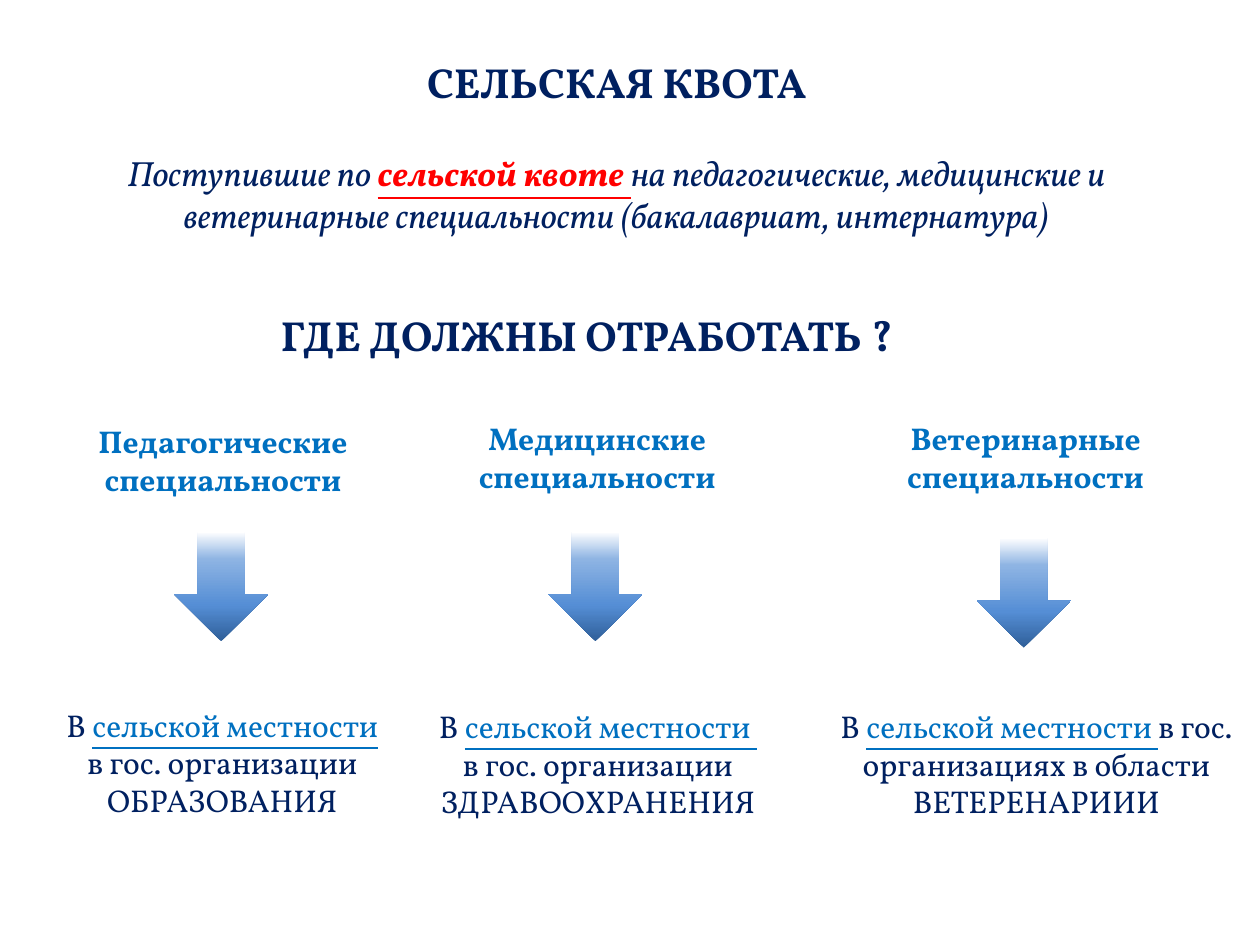
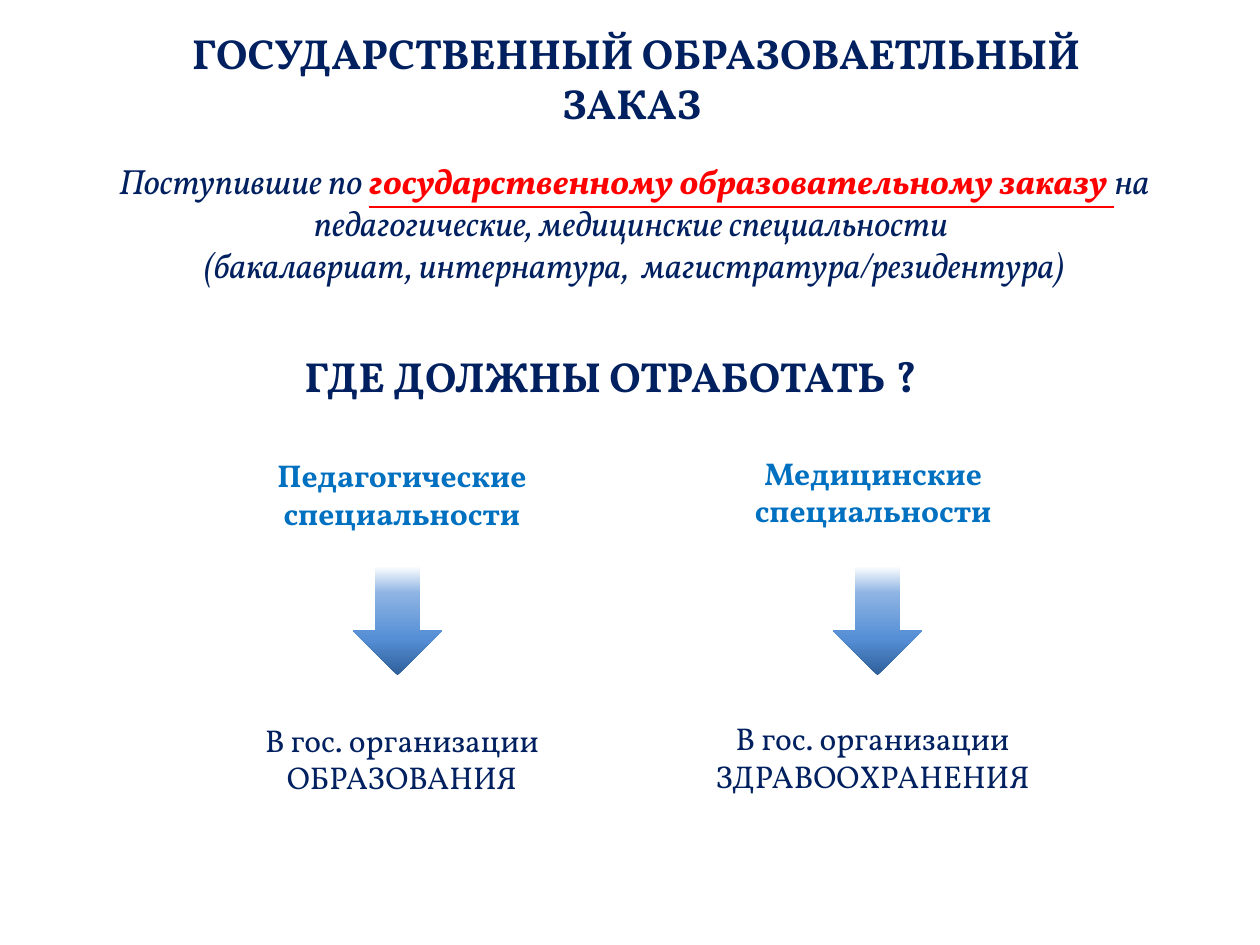
"""Builds two slides on where graduates of quota and state-order places must work."""
from dataclasses import dataclass
from typing import NamedTuple

from lxml.etree import SubElement
from pptx import Presentation
from pptx.dml.color import RGBColor
from pptx.enum.shapes import MSO_SHAPE
from pptx.enum.text import MSO_ANCHOR, MSO_AUTO_SIZE, PP_ALIGN
from pptx.oxml.ns import qn
from pptx.util import Inches, Pt

FONT = "Vollkorn"
NAVY = RGBColor(0x00, 0x20, 0x60)
BLUE = RGBColor(0x00, 0x70, 0xC0)
RED = RGBColor(0xFF, 0x00, 0x00)
ARROW_STOPS = (
    (0, RGBColor(0x2F, 0x5F, 0x99)),
    (33, RGBColor(0x55, 0x8E, 0xD5)),
    (75, RGBColor(0x8E, 0xB4, 0xE3)),
    (100, RGBColor(0xFF, 0xFF, 0xFF)),
)
QUESTION = "ГДЕ ДОЛЖНЫ ОТРАБОТАТЬ ?"
HEADING_WIDTH, HEADING_HEIGHT = 2.52, 0.71
ARROW_HEIGHT = 0.87


class Box(NamedTuple):
    left: float
    top: float
    width: float
    height: float


class Span(NamedTuple):
    text: str
    color: RGBColor = NAVY
    bold: bool = False
    underline: bool = False


class Style(NamedTuple):
    size: int
    bold: bool = False
    italic: bool = False
    align: PP_ALIGN = PP_ALIGN.CENTER


TITLE = Style(24, bold=True)
QUESTION_STYLE = Style(24, bold=True, align=PP_ALIGN.LEFT)
INTRO = Style(20, italic=True)
HEADING = Style(18, bold=True)
DESTINATION = Style(18)
COUNTRYSIDE = Span("сельской местности ", BLUE, underline=True)


@dataclass
class Specialty:
    name: str
    heading_at: tuple[float, float]
    arrow_at: tuple[float, float]
    destination_box: Box
    destination: list[Span]


@dataclass
class Route:
    title: str
    title_box: Box
    intro: list[Span]
    intro_box: Box
    question_box: Box
    arrow_width: float
    specialties: list[Specialty]


ROUTES = [
    Route(
        "СЕЛЬСКАЯ КВОТА",
        Box(2.96, 0.4, 3.87, 0.5),
        [
            Span("Поступившие по "),
            Span("сельской квоте ", RED, True, True),
            Span("на педагогические, медицинские и ветеринарные "
                 "специальности (бакалавриат, интернатура)"),
        ],
        Box(0.68, 1.15, 8.43, 0.77),
        Box(2.13, 2.41, 5.51, 0.5),
        0.75,
        [
            Specialty("Педагогические", (0.51, 3.3), (1.38, 4.22), Box(0.35, 5.55, 2.83, 1.01),
                      [Span("В "), COUNTRYSIDE, Span("в гос. организации ОБРАЗОВАНИЯ")]),
            Specialty("Медицинские", (3.48, 3.28), (4.35, 4.22), Box(3.29, 5.56, 2.91, 1.01),
                      [Span("В "), COUNTRYSIDE, Span("\nв гос. организации ЗДРАВООХРАНЕНИЯ")]),
            Specialty("Ветеринарные", (6.88, 3.28), (7.75, 4.27), Box(6.53, 5.56, 3.39, 1.01),
                      [Span("В "), COUNTRYSIDE,
                       Span("в гос. организациях в области ВЕТЕРЕНАРИИИ")]),
        ],
    ),
    Route(
        " ГОСУДАРСТВЕННЫЙ ОБРАЗОВАЕТЛЬНЫЙ ЗАКАЗ",
        Box(0.92, 0.16, 8.19, 0.91),
        [
            Span("Поступившие по "),
            Span("государственному образовательному заказу ", RED, True, True),
            Span("на педагогические, медицинские специальности \n"
                 "(бакалавриат, интернатура,  магистратура/резидентура)"),
        ],
        Box(0.35, 1.22, 9.37, 1.11),
        Box(2.32, 2.73, 5.51, 0.5),
        0.71,
        [
            Specialty("Педагогические", (1.93, 3.57), (2.8, 4.49), Box(1.93, 5.67, 2.52, 0.71),
                      [Span("В гос. организации ОБРАЗОВАНИЯ")]),
            Specialty("Медицинские", (5.67, 3.55), (6.61, 4.49), Box(5.47, 5.66, 2.91, 0.71),
                      [Span("В гос. организации ЗДРАВООХРАНЕНИЯ")]),
        ],
    ),
]


def place(shape, box: Box) -> None:
    shape.left, shape.top, shape.width, shape.height = map(Inches, box)


def write(shape, spans: list[Span], style: Style) -> None:
    frame = shape.text_frame
    frame.word_wrap = True
    frame.auto_size = MSO_AUTO_SIZE.SHAPE_TO_FIT_TEXT
    paragraph = frame.paragraphs[0]
    paragraph.alignment = style.align
    font = paragraph.font
    font.name, font.size = FONT, Pt(style.size)
    font.bold, font.italic = style.bold, style.italic
    font.color.rgb = spans[0].color
    for span in spans:
        for number, line in enumerate(span.text.split("\n")):
            if number:
                paragraph.add_line_break()
            if not line:
                continue
            run = paragraph.add_run()
            run.text = line
            if span.color != spans[0].color:
                run.font.color.rgb = span.color
            if span.bold:
                run.font.bold = True
            if span.underline:
                run.font.underline = True


def add_text(slide, box: Box, spans: list[Span], style: Style) -> None:
    write(slide.shapes.add_textbox(*map(Inches, box)), spans, style)


def add_arrow(slide, box: Box) -> None:
    arrow = slide.shapes.add_shape(MSO_SHAPE.DOWN_ARROW, *map(Inches, box))
    arrow.shadow.inherit = False
    arrow.line.fill.background()
    arrow.fill.gradient()
    arrow.fill.gradient_angle = 90
    stops = arrow.element.spPr.find(qn("a:gradFill")).find(qn("a:gsLst"))
    for stop in list(stops):
        stops.remove(stop)
    for percent, color in ARROW_STOPS:
        stop = SubElement(stops, qn("a:gs"), pos=str(percent * 1000))
        SubElement(stop, qn("a:srgbClr"), val=str(color))


def add_route(deck, route: Route) -> None:
    slide = deck.slides.add_slide(deck.slide_layouts[5])
    title = slide.shapes.title
    place(title, route.title_box)
    write(title, [Span(route.title)], TITLE)
    title.text_frame.vertical_anchor = MSO_ANCHOR.MIDDLE
    add_text(slide, route.intro_box, route.intro, INTRO)
    add_text(slide, route.question_box, [Span(QUESTION)], QUESTION_STYLE)
    for specialty in route.specialties:
        heading_box = Box(*specialty.heading_at, HEADING_WIDTH, HEADING_HEIGHT)
        add_text(slide, heading_box, [Span(f"{specialty.name} специальности", BLUE)], HEADING)
        add_arrow(slide, Box(*specialty.arrow_at, route.arrow_width, ARROW_HEIGHT))
        add_text(slide, specialty.destination_box, specialty.destination, DESTINATION)


def main() -> None:
    deck = Presentation()
    deck.slide_width, deck.slide_height = Inches(10), Inches(7.5)
    for route in ROUTES:
        add_route(deck, route)
    deck.save("out.pptx")


if __name__ == "__main__":
    main()
